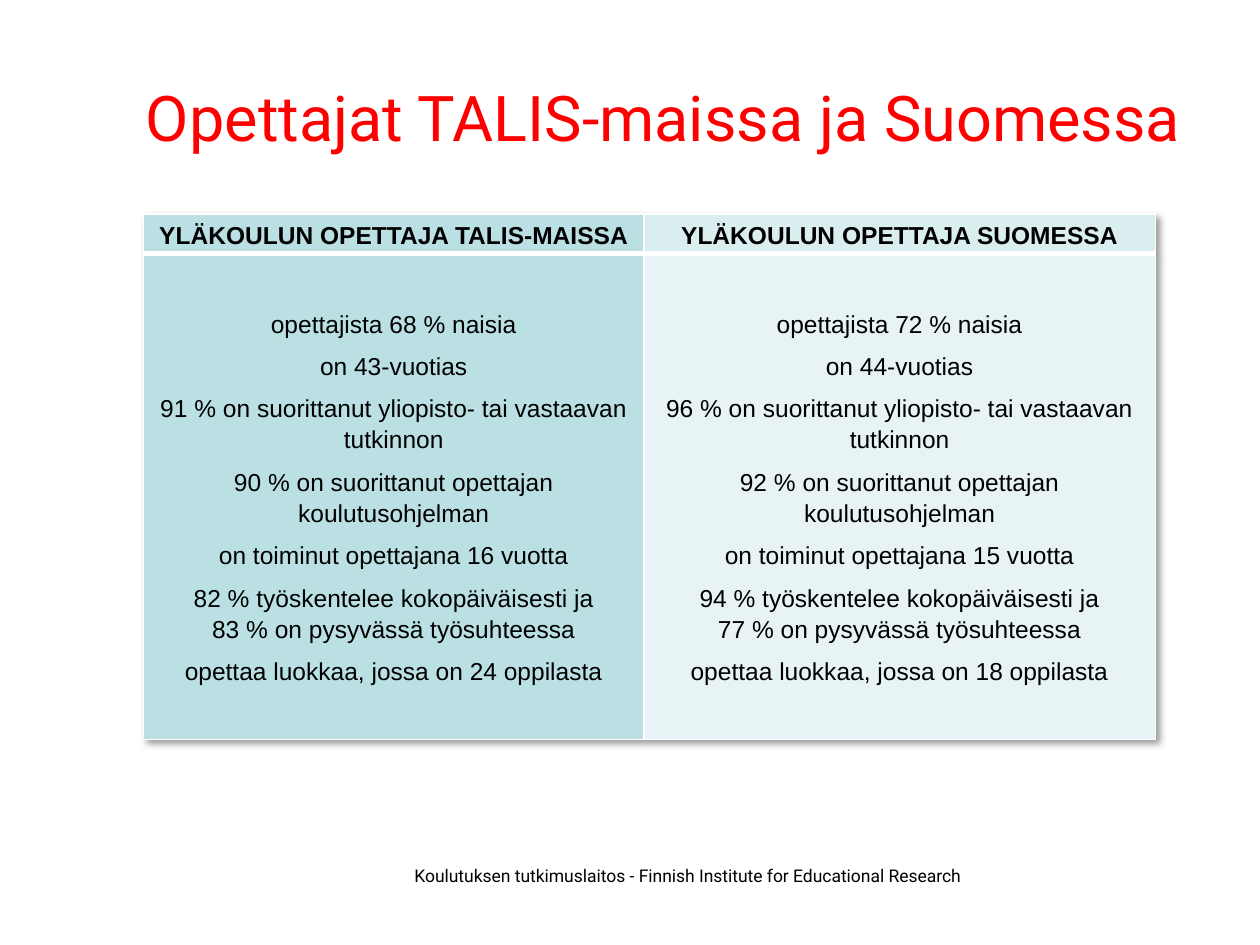
from dataclasses import dataclass

from lxml import etree
from pptx import Presentation
from pptx.dml.color import RGBColor
from pptx.enum.text import MSO_ANCHOR, PP_ALIGN
from pptx.oxml import parse_xml
from pptx.oxml.ns import nsdecls, qn
from pptx.util import Inches, Pt

CENTER = PP_ALIGN.CENTER
MIDDLE = MSO_ANCHOR.MIDDLE


@dataclass(frozen=True)
class Theme:
    title_font: str = "Roboto"
    table_font: str = "Arial"
    title_size: int = 36
    table_size: int = 14
    footer_size: int = 10
    title_color: str = "FF0000"
    text_color: str = "000000"
    border_color: str = "FFFFFF"
    header_fills: tuple = ("BBE0E3", "DAEDEF")
    body_fills: tuple = ("BBE0E3", "E7F3F4")


theme = Theme()

HEADERS = ("YLÄKOULUN OPETTAJA TALIS-MAISSA", "YLÄKOULUN OPETTAJA SUOMESSA")
STATEMENTS = (
    "opettajista {} % naisia",
    "on {}-vuotias",
    "{} % on suorittanut yliopisto- tai vastaavan tutkinnon",
    "{} % on suorittanut opettajan koulutusohjelman",
    "on toiminut opettajana {} vuotta",
    "{} % työskentelee kokopäiväisesti ja\n{} % on pysyvässä työsuhteessa",
    "opettaa luokkaa, jossa on {} oppilasta",
)
FIGURES = (
    ((68,), (43,), (91,), (90,), (16,), (82, 83), (24,)),
    ((72,), (44,), (96,), (92,), (15,), (94, 77), (18,)),
)


def add_text(paragraph, text, font, size, color, bold=False):
    """Add one run per line of text, with line breaks between them."""
    for number, line in enumerate(text.split("\n")):
        if number:
            paragraph.add_line_break()
        run = paragraph.add_run()
        run.text = line
        run.font.name = font
        run.font.size = Pt(size)
        run.font.bold = bold
        run.font.color.rgb = RGBColor.from_string(color)


def set_borders(cell, **widths):
    """Draw the cell's edges; widths are points by edge, in schema order."""
    properties = cell._tc.get_or_add_tcPr()
    for edge, width in widths.items():
        line = etree.SubElement(properties, qn(f"a:ln{edge}"), w=str(Pt(width)))
        fill = etree.SubElement(line, qn("a:solidFill"))
        etree.SubElement(fill, qn("a:srgbClr"), val=theme.border_color)


presentation = Presentation()
presentation.slide_width = Inches(10)
presentation.slide_height = Inches(7.5)
slide = presentation.slides.add_slide(presentation.slide_layouts[5])

# Title
title = slide.shapes.title
title.left, title.top = Inches(0.97), Inches(0.3)
title.width, title.height = Inches(8.59), Inches(1.25)
title.text_frame.vertical_anchor = MIDDLE
paragraph = title.text_frame.paragraphs[0]
paragraph.alignment = CENTER
add_text(paragraph, "Opettajat TALIS-maissa ja Suomessa",
         theme.title_font, theme.title_size, theme.title_color)

# Comparison table
column_widths = (3.97, 4.06)
row_heights = (0.31, 3.86)
table = slide.shapes.add_table(
    len(row_heights), len(column_widths), Inches(1.14), Inches(1.7),
    Inches(sum(column_widths)), Inches(sum(row_heights))).table
for column, width in zip(table.columns, column_widths):
    column.width = Inches(width)
for row, height in zip(table.rows, row_heights):
    row.height = Inches(height)

table_shadow = parse_xml(
    f'<a:effectLst {nsdecls("a")}>'
    '<a:outerShdw blurRad="50800" dist="38100" dir="2700000" algn="tl">'
    '<a:srgbClr val="000000"><a:alpha val="40000"/></a:srgbClr>'
    '</a:outerShdw></a:effectLst>')
table._tbl.tblPr.insert(0, table_shadow)

for column, (header, figures) in enumerate(zip(HEADERS, FIGURES)):
    statements = [text.format(*values) for text, values in zip(STATEMENTS, figures)]
    rows = (([header], theme.header_fills, 1, 3), (statements, theme.body_fills, 3, 1))
    for row, (lines, fills, top_border, bottom_border) in enumerate(rows):
        cell = table.cell(row, column)
        set_borders(cell, L=1, R=1, T=top_border, B=bottom_border)
        cell.fill.solid()
        cell.fill.fore_color.rgb = RGBColor.from_string(fills[column])
        cell.vertical_anchor = MIDDLE
        cell.margin_left = cell.margin_right = Inches(0.02)
        cell.margin_top = cell.margin_bottom = 0
        for number, text in enumerate(lines):
            frame = cell.text_frame
            paragraph = frame.add_paragraph() if number else frame.paragraphs[0]
            paragraph.alignment = CENTER
            paragraph.line_spacing = 1.15
            paragraph.space_before = Pt(3 if number else 0)
            paragraph.space_after = Pt(3)
            add_text(paragraph, text, theme.table_font, theme.table_size,
                     theme.text_color, bold=row == 0)

# Footer
footer = slide.shapes.add_textbox(Inches(3.19), Inches(6.82), Inches(4.65), Inches(0.36))
footer.text_frame.word_wrap = True
add_text(footer.text_frame.paragraphs[0],
         "Koulutuksen tutkimuslaitos - Finnish Institute for Educational Research",
         theme.title_font, theme.footer_size, theme.text_color)

presentation.save("out.pptx")
